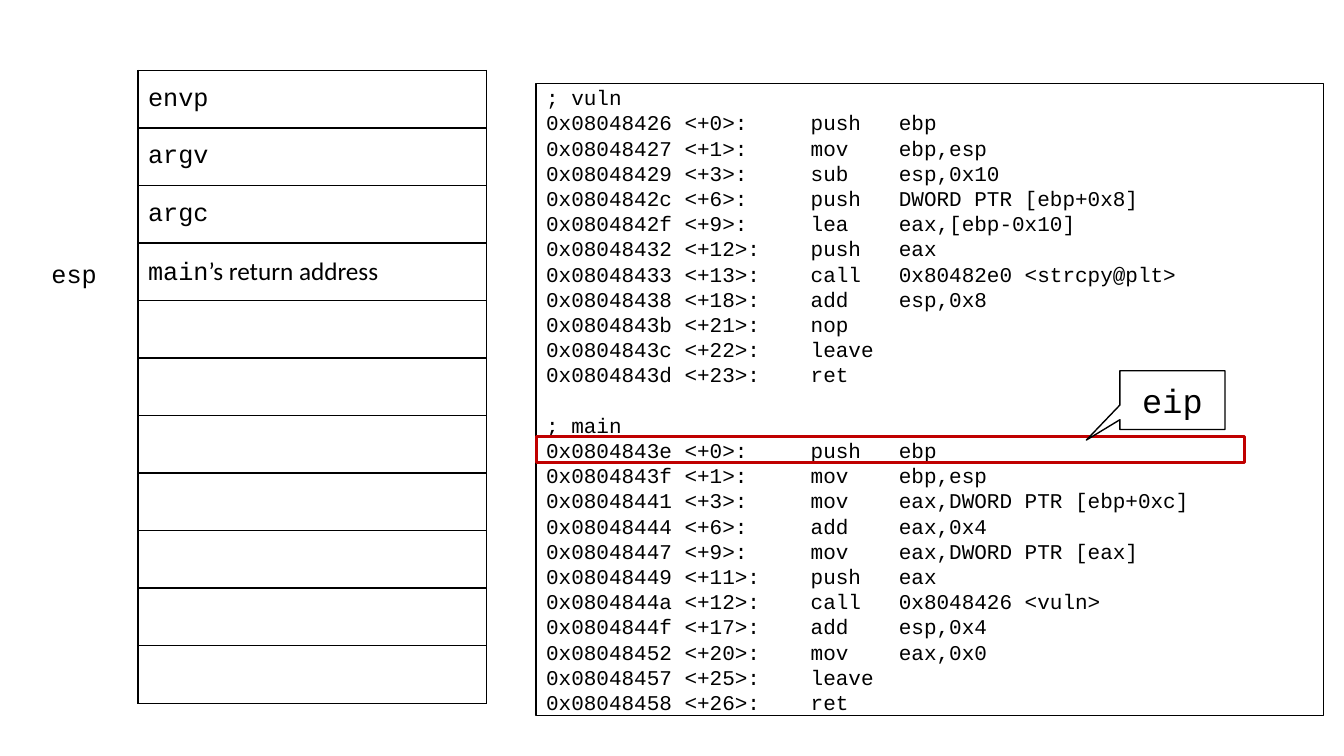
import pptx
import pptx.util
import pptx.dml.color
import pptx.enum.shapes
import pptx.enum.text
import pptx.oxml
import pptx.oxml.ns
import lxml.etree

Pt = pptx.util.Pt
Kind = pptx.enum.shapes.MSO_SHAPE
Align = pptx.enum.text.PP_ALIGN
Mid = pptx.enum.text.MSO_ANCHOR.MIDDLE
qn = pptx.oxml.ns.qn

INK = {"black": "000000", "white": "FFFFFF", "red": "C00000"}
MONO, SANS = "Courier New", "Calibri"
STEP = 18  # height of a code line
STOPS = (189, 252)  # columns of the opcode and its operand

STACK = [
    [("envp", MONO)],
    [("argv", MONO)],
    [("argc", MONO)],
    [("main", MONO), ("’s return address", SANS)],
]
ROWS = 11

VULN = """0x08048426 <+0>:|push|ebp
0x08048427 <+1>:|mov|ebp,esp
0x08048429 <+3>:|sub|esp,0x10
0x0804842c <+6>:|push|DWORD PTR [ebp+0x8]
0x0804842f <+9>:|lea|eax,[ebp-0x10]
0x08048432 <+12>:|push|eax
0x08048433 <+13>:|call|0x80482e0 <strcpy@plt>
0x08048438 <+18>:|add|esp,0x8
0x0804843b <+21>:|nop
0x0804843c <+22>:|leave
0x0804843d <+23>:|ret""".split("\n")

MAIN = """0x0804843e <+0>:|push|ebp
0x0804843f <+1>:|mov|ebp,esp
0x08048441 <+3>:|mov|eax,DWORD PTR [ebp+0xc]
0x08048444 <+6>:|add|eax,0x4
0x08048447 <+9>:|mov|eax,DWORD PTR [eax]
0x08048449 <+11>:|push|eax
0x0804844a <+12>:|call|0x8048426 <vuln>
0x0804844f <+17>:|add|esp,0x4
0x08048452 <+20>:|mov|eax,0x0
0x08048457 <+25>:|leave
0x08048458 <+26>:|ret""".split("\n")


def rgb(name):
    return pptx.dml.color.RGBColor.from_string(INK[name])


def write(para, text, size=18, font=MONO, color="black", align=Align.LEFT):
    para.alignment = align
    run = para.add_run()
    run.text = text
    run.font.size = Pt(size)
    run.font.name = font
    run.font.color.rgb = rgb(color)


def block(slide, box, kind=Kind.RECTANGLE, fill="white", line="black", width=1):
    shape = slide.shapes.add_shape(kind, *map(Pt, box))
    shape.shadow.inherit = False
    if fill:
        shape.fill.solid()
        shape.fill.fore_color.rgb = rgb(fill)
    else:
        shape.fill.background()
    shape.line.color.rgb = rgb(line)
    shape.line.width = Pt(width)
    shape.text_frame.vertical_anchor = Mid
    return shape


def tabs(para):
    props = para._p.get_or_add_pPr()
    group = lxml.etree.SubElement(props, qn("a:tabLst"))
    for stop in STOPS:
        lxml.etree.SubElement(group, qn("a:tab"), pos=str(Pt(stop)), algn="l")


def border(cell):
    props = cell._tc.get_or_add_tcPr()
    for i, side in enumerate(("lnL", "lnR", "lnT", "lnB")):
        edge = pptx.oxml.parse_xml(
            f'<a:{side} xmlns:a="http://schemas.openxmlformats.org/drawingml/2006/main"'
            f' w="{Pt(1)}"><a:solidFill><a:srgbClr val="{INK["black"]}"/>'
            f'</a:solidFill></a:{side}>')
        props.insert(i, edge)


def code(slide, left, top, width, height):
    # Listing of both functions
    panel = block(slide, (left, top, width, height))
    frame = panel.text_frame
    lines = ["; vuln", *VULN, "; main", *MAIN]
    for i, line in enumerate(lines):
        para = frame.paragraphs[0] if i == 0 else frame.add_paragraph()
        write(para, line.replace("|", "\t"), size=15)
        para.line_spacing = Pt(STEP)
        if line == "; main":
            para.space_before = Pt(STEP)
        tabs(para)


def stack(slide, left, top, width, height):
    # Stack cells
    table = slide.shapes.add_table(ROWS, 1, *map(Pt, (left, top, width, height))).table
    table.first_row = table.horz_banding = False
    for i in range(ROWS):
        table.rows[i].height = Pt(height / ROWS)
        cell = table.cell(i, 0)
        cell.fill.background()
        cell.vertical_anchor = Mid
        border(cell)
        for text, font in STACK[i] if i < len(STACK) else []:
            write(cell.text_frame.paragraphs[0], text, font=font)

    # Stack pointer, beside the last filled cell
    mid = top + height / ROWS * (len(STACK) - 0.5)
    label = slide.shapes.add_textbox(Pt(left - 74.2), Pt(mid - 13.6), Pt(57), Pt(29))
    label.text_frame.word_wrap = True
    write(label.text_frame.paragraphs[0], "esp", align=Align.CENTER)


def marker(slide, left, top, width, height):
    # Current instruction and its callout
    block(slide, (left, top, width, height), fill=None, line="red", width=2)
    note = block(slide, (left + 417, top - 47, 75, 42), Kind.RECTANGULAR_CALLOUT)
    note.adjustments[0] = -0.82
    note.adjustments[1] = 0.68
    write(note.text_frame.paragraphs[0], "eip", size=24, align=Align.CENTER)


def main():
    deck = pptx.Presentation()
    deck.slide_width, deck.slide_height = Pt(960), Pt(540)
    slide = deck.slides.add_slide(deck.slide_layouts[6])
    left, top = 383, 59.8
    code(slide, left, top, 562.3, 451.4)
    stack(slide, 98.6, 50.4, 249.1, 452.1)
    marker(slide, left, top + STEP * (len(VULN) + 3), 506.2, 18.7)
    deck.save("out.pptx")


if __name__ == "__main__":
    main()
